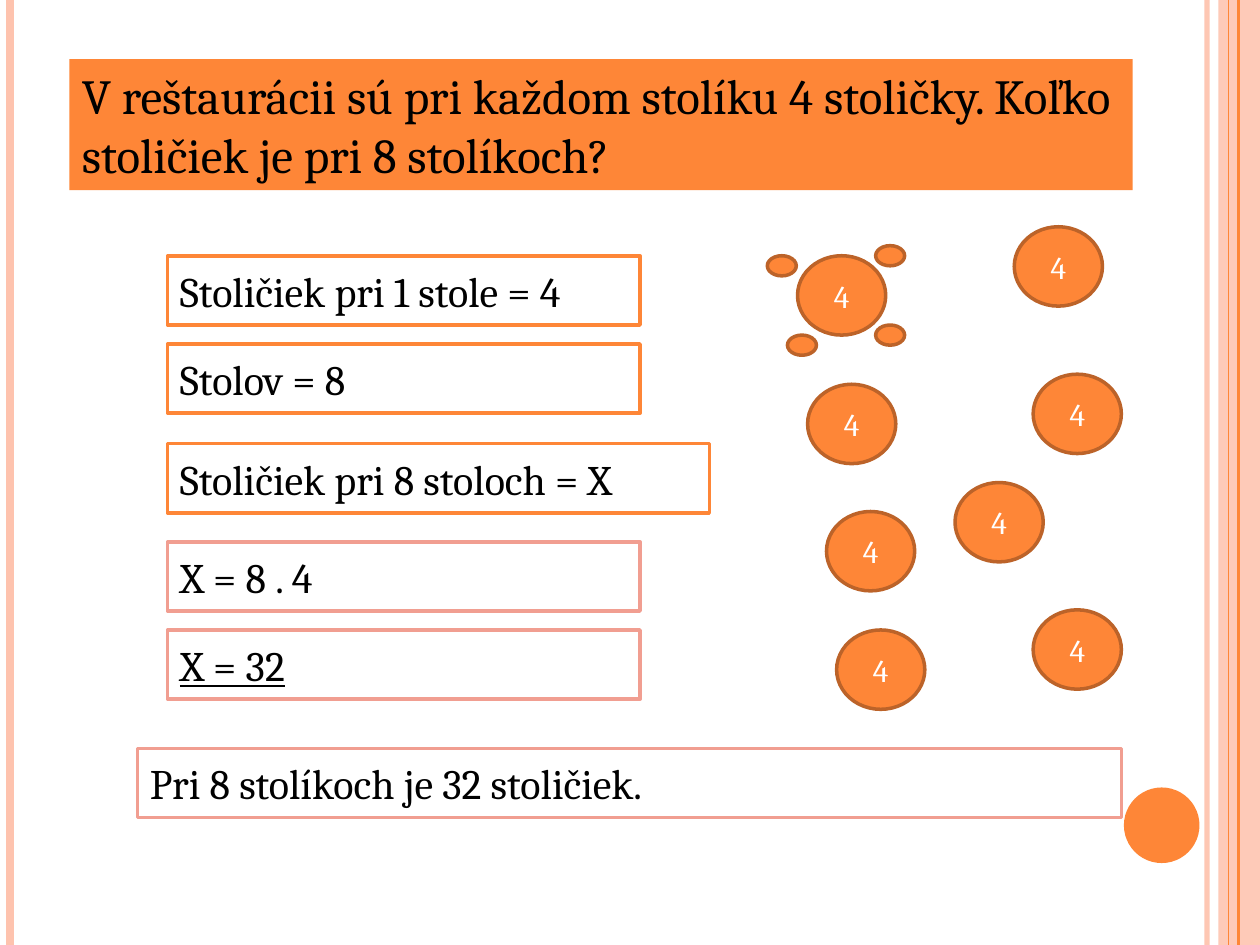
from lxml.etree import SubElement
from pptx import Presentation
from pptx.dml.color import RGBColor
from pptx.enum.shapes import MSO_CONNECTOR, MSO_SHAPE
from pptx.enum.text import MSO_ANCHOR, MSO_AUTO_SIZE, PP_ALIGN
from pptx.oxml.ns import qn
from pptx.util import Inches, Pt

ORANGE = RGBColor(0xFE, 0x86, 0x37)
BROWN = RGBColor(0xBC, 0x63, 0x29)
PEACH = RGBColor(0xFE, 0xC3, 0xAE)
PINK = RGBColor(0xF1, 0x9E, 0x91)
BLACK = RGBColor(0, 0, 0)
WHITE = RGBColor(0xFF, 0xFF, 0xFF)


def write(holder, text, size=24, color=BLACK, align=PP_ALIGN.LEFT,
          anchor=MSO_ANCHOR.MIDDLE, underline=None):
    frame = holder.text_frame
    frame.word_wrap = True
    frame.auto_size = MSO_AUTO_SIZE.NONE
    frame.vertical_anchor = anchor
    paragraph = frame.paragraphs[0]
    paragraph.alignment = align
    run = paragraph.add_run()
    run.text = text
    run.font.name = "Cambria"
    run.font.size = Pt(size)
    run.font.color.rgb = color
    run.font.underline = underline


def draw(kind, left, top, width, height, fill, outline=None):
    figure = slide.shapes.add_shape(
        kind, Inches(left), Inches(top), Inches(width), Inches(height))
    figure.shadow.inherit = False
    figure.fill.solid()
    figure.fill.fore_color.rgb = fill
    if outline is None:
        figure.line.fill.background()
    else:
        figure.line.color.rgb = outline
        figure.line.width = Pt(2)
    return figure


presentation = Presentation()
presentation.slide_width = Inches(10)
presentation.slide_height = Inches(7.5)
slide = presentation.slides.add_slide(presentation.slide_layouts[5])

margin_band = draw(MSO_SHAPE.RECTANGLE, 9.67, 0, 0.33, 7.5, PEACH)
band_color = margin_band.fill._xPr.find(qn("a:solidFill"))[0]
SubElement(band_color, qn("a:alpha"), val="87000")

for x, color, weight, opacity in [
    (9.58, PEACH, 3, 93),
    (0.08, PEACH, 4.5, 100),
    (9.83, ORANGE, 1.5, 100),
    (9.75, ORANGE, 0.75, 100),
]:
    stripe = slide.shapes.add_connector(
        MSO_CONNECTOR.STRAIGHT, Inches(x), 0, Inches(x), Inches(7.5))
    stripe.line.color.rgb = color
    stripe.line.width = Pt(weight)
    if opacity < 100:
        stripe_color = stripe.line._ln.find(qn("a:solidFill"))[0]
        SubElement(stripe_color, qn("a:alpha"), val=str(opacity * 1000))
    SubElement(stripe._element.spPr, qn("a:effectLst"))

draw(MSO_SHAPE.OVAL, 8.92, 6.25, 0.6, 0.6, ORANGE)

question = slide.shapes.title
question.left, question.top = Inches(0.55), Inches(0.47)
question.width, question.height = Inches(8.44), Inches(1.04)
question.fill.solid()
question.fill.fore_color.rgb = ORANGE
write(question, "V reštaurácii sú pri každom stolíku 4 stoličky. "
      "Koľko stoličiek je pri 8 stolíkoch?", size=28, anchor=MSO_ANCHOR.TOP)

for text, left, top, width, outline, underline in [
    ("Stoličiek pri 1 stole = 4", 1.33, 2.03, 3.75, ORANGE, None),
    ("Stolov = 8", 1.33, 2.73, 3.75, ORANGE, None),
    ("Stoličiek pri 8 stoloch = X", 1.33, 3.52, 4.3, ORANGE, None),
    ("X = 8 . 4", 1.33, 4.3, 3.75, PINK, None),
    ("X = 32", 1.33, 5, 3.75, PINK, True),
    ("Pri 8 stolíkoch je 32 stoličiek.", 1.09, 5.94, 7.81, PINK, None),
]:
    step = draw(MSO_SHAPE.RECTANGLE, left, top, width, 0.55, WHITE, outline)
    write(step, text, underline=underline)

for left, top in [(6.33, 2.03), (8.05, 1.8), (8.2, 2.97), (6.41, 3.05),
                  (6.56, 4.06), (6.64, 5), (8.2, 4.84), (7.58, 3.83)]:
    table = draw(MSO_SHAPE.OVAL, left, top, 0.7, 0.63, ORANGE, BROWN)
    write(table, "4", size=18, color=WHITE, align=PP_ALIGN.CENTER)

for left, top in [(6.95, 2.58), (6.95, 1.95), (6.09, 2.03), (6.25, 2.66)]:
    draw(MSO_SHAPE.OVAL, left, top, 0.23, 0.16, ORANGE, BROWN)

presentation.save("out.pptx")
